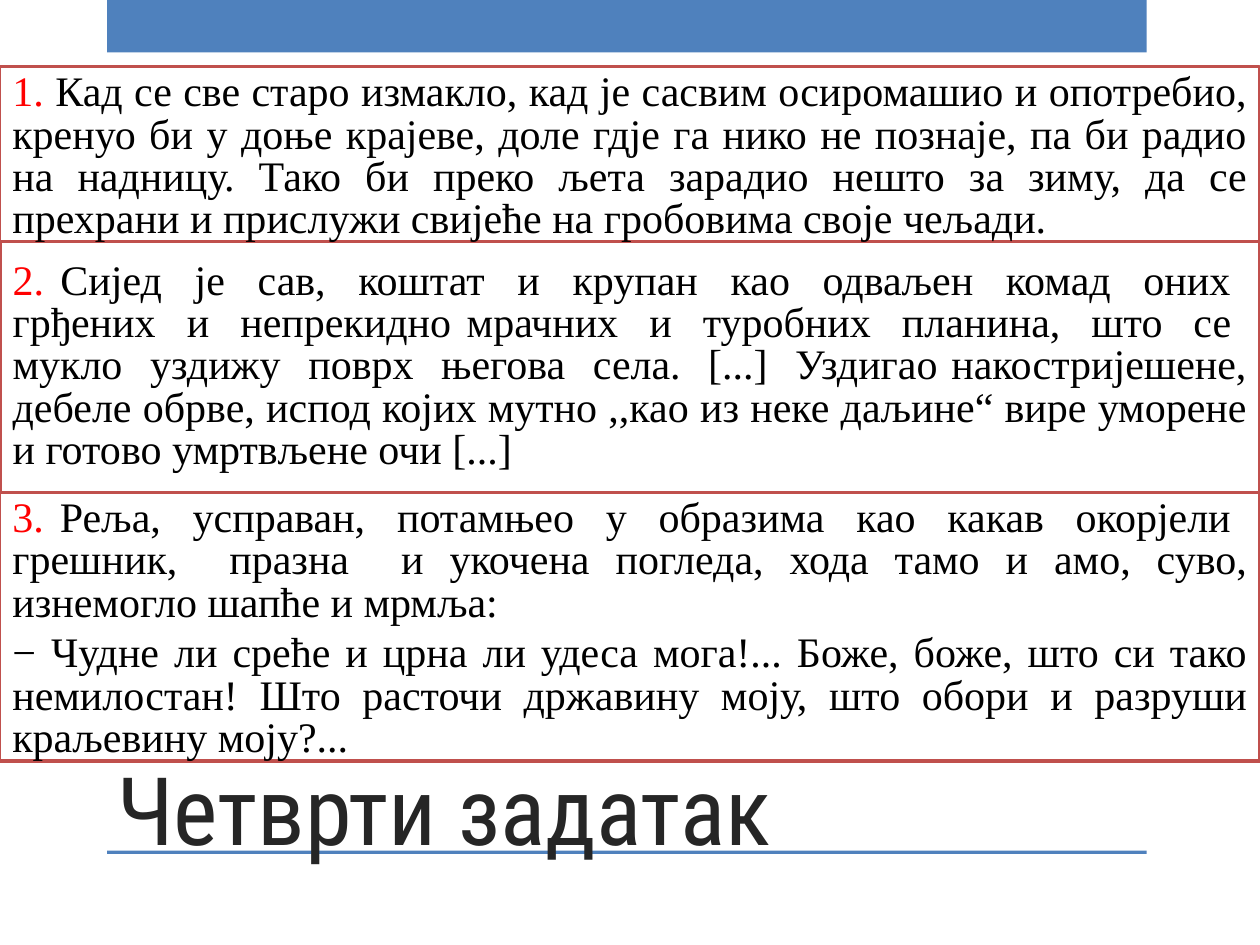
from lxml import etree
from pptx import Presentation
from pptx.dml.color import RGBColor
from pptx.enum.shapes import MSO_SHAPE as Shape
from pptx.enum.text import MSO_ANCHOR as Anchor, MSO_AUTO_SIZE as AutoSize, PP_ALIGN as Align
from pptx.oxml.ns import qn
from pptx.util import Pt


def color(value):
    return RGBColor.from_string(value)


def place(shape, left, top, width, height):
    shape.left, shape.top, shape.width, shape.height = Pt(left), Pt(top), Pt(width), Pt(height)


presentation = Presentation()
presentation.slide_width, presentation.slide_height = Pt(720), Pt(540)
slide = presentation.slides.add_slide(presentation.slide_layouts[1])
title, body = slide.placeholders

for position, (top, height) in enumerate([(0, 30), (486, 2)]):
    bar = slide.shapes.add_shape(Shape.RECTANGLE, Pt(61.2), Pt(top), Pt(594), Pt(height))
    bar.shadow.inherit = False
    bar.fill.solid()
    bar.fill.fore_color.rgb = color("4F81BD")
    bar.line.fill.background()
    slide.shapes._spTree.insert(2 + position, bar._element)

place(title, 59.8, 371.5, 534.2, 126)
title.text_frame.auto_size = AutoSize.NONE
title.text_frame.vertical_anchor = Anchor.BOTTOM
paragraph = title.text_frame.paragraphs[0]
paragraph.alignment = Align.LEFT
run = paragraph.add_run()
run.text = "Четврти задатак"
run.font.name = "Roboto Condensed"
run.font.size = Pt(54)
run.font.color.rgb = color("262626")

first_box = slide.shapes.add_textbox(0, 0, 0, 0)
third_box = slide.shapes.add_textbox(0, 0, 0, 0)
excerpts = [
    (first_box, 38.2, 100, Anchor.TOP, [
        ("1. ", "Кад се све старо измакло, кад је сасвим осиромашио и опотребио, кренуо би у доње "
                "крајеве, доле гдје га нико не познаје, па би радио на надницу. Тако би преко љета "
                "зарадио нешто за зиму, да се прехрани и прислужи свијеће на гробовима своје чељади."),
    ]),
    (body, 138.2, 143.3, Anchor.MIDDLE, [
        ("2. ", "Сијед  је  сав,  коштат  и  крупан  као  одваљен  комад  оних  грђених  и  "
                "непрекидно мрачних  и  туробних  планина,  што  се  мукло  уздижу  поврх  његова  "
                "села.  [...]  Уздигао накостријешене, дебеле обрве, испод којих мутно ,,као из неке "
                "даљине“ вире уморене и готово умртвљене очи [...]"),
    ]),
    (third_box, 281.5, 153.4, Anchor.TOP, [
        ("3. ", "Реља,  усправан,  потамњео  у  образима  као  какав  окорјели  грешник,  празна  и "
                "укочена погледа, хода тамо и амо, суво, изнемогло шапће и мрмља:"),
        ("", "− Чудне ли среће и црна ли удеса мога!... Боже, боже, што си тако немилостан! Што "
             "расточи државину моју, што обори и разруши краљевину моју?..."),
    ]),
]

for box, top, height, anchor, passages in excerpts:
    place(box, 0, top, 720, height)
    box.fill.solid()
    box.fill.fore_color.rgb = color("FFFFFF")
    box.line.color.rgb = color("C0504D")
    box.line.width = Pt(1.75)
    frame = box.text_frame
    frame.word_wrap = True
    frame.auto_size = AutoSize.NONE
    frame.vertical_anchor = anchor
    for index, (number, passage) in enumerate(passages):
        paragraph = frame.add_paragraph() if index else frame.paragraphs[0]
        paragraph.alignment = Align.JUSTIFY
        paragraph.line_spacing = 0.84
        paragraph.space_before = Pt(4.8)
        properties = paragraph._p.get_or_add_pPr()
        properties.set("marL", "0")
        properties.set("indent", "0")
        etree.SubElement(properties, qn("a:buNone"))
        for text, shade in [(number, "FF0000"), (passage, "000000")]:
            if text:
                run = paragraph.add_run()
                run.text = text
                run.font.name = "Times New Roman"
                run.font.size = Pt(24)
                run.font.color.rgb = color(shade)

presentation.save("out.pptx")
